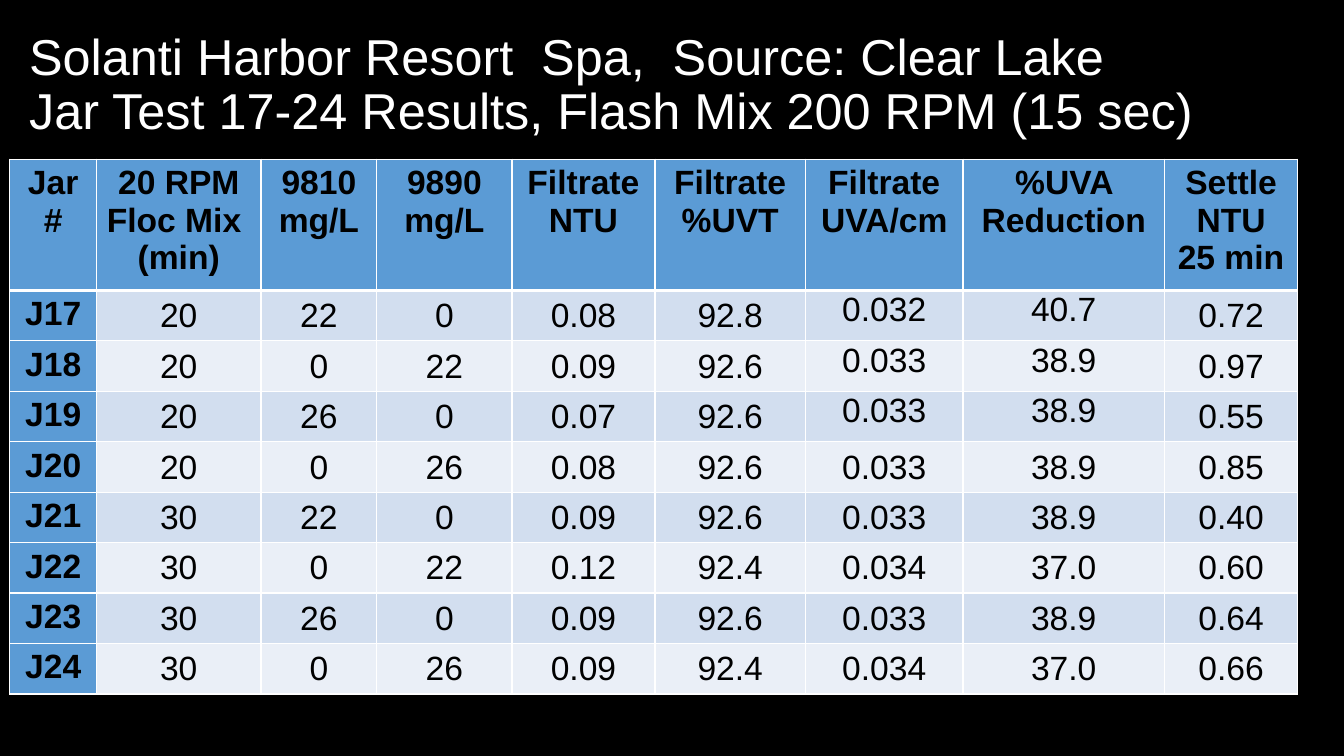
import pptx
import pptx.util
import pptx.dml.color
import pptx.enum.text
import pptx.oxml.ns
import lxml.etree

Pt = pptx.util.Pt
Align = pptx.enum.text.PP_ALIGN
Anchor = pptx.enum.text.MSO_ANCHOR
hues = {"black": "000000", "white": "FFFFFF", "blue": "5B9BD5",
        "dark": "D2DEEF", "light": "EAEFF7"}


def rgb(name):
    return pptx.dml.color.RGBColor.from_string(hues[name])


def write(frame, text, size=24, color="black", bold=False, align=Align.CENTER, space=None):
    """Fill a text frame, one paragraph for each line of text."""
    for i, line in enumerate(text.split("\n")):
        para = frame.add_paragraph() if i else frame.paragraphs[0]
        para.text = line
        para.alignment = align
        para.line_spacing = space
        for run in para.runs:
            run.font.name = "Arial"
            run.font.size = Pt(size)
            run.font.bold = bold
            run.font.color.rgb = rgb(color)


deck = pptx.Presentation()
deck.slide_width, deck.slide_height = Pt(960), Pt(540)
slide = deck.slides.add_slide(deck.slide_layouts[6])
slide.background.fill.solid()
slide.background.fill.fore_color.rgb = rgb("black")

title = slide.shapes.add_textbox(Pt(13.7), Pt(9.4), Pt(877.7), Pt(104.4)).text_frame
title.word_wrap = True
title.vertical_anchor = Anchor.MIDDLE
write(title, "Solanti Harbor Resort  Spa,  Source: Clear Lake\v"
      "Jar Test 17-24 Results, Flash Mix 200 RPM (15 sec)",
      size=36, color="white", align=Align.LEFT, space=0.9)

heads = ["Jar #", "20 RPM\nFloc Mix \n(min)", "9810\nmg/L", "9890\nmg/L",
         "Filtrate\nNTU", "Filtrate\n%UVT", "Filtrate\nUVA/cm",
         "%UVA Reduction", "Settle\nNTU\n25 min"]
tests = """J17 20 22 0 0.08 92.8 0.032 40.7 0.72
J18 20 0 22 0.09 92.6 0.033 38.9 0.97
J19 20 26 0 0.07 92.6 0.033 38.9 0.55
J20 20 0 26 0.08 92.6 0.033 38.9 0.85
J21 30 22 0 0.09 92.6 0.033 38.9 0.40
J22 30 0 22 0.12 92.4 0.034 37.0 0.60
J23 30 26 0 0.09 92.6 0.033 38.9 0.64
J24 30 0 26 0.09 92.4 0.034 37.0 0.66"""
rows = [heads] + [line.split() for line in tests.split("\n")]
wides = [62, 117.4, 82.8, 96.5, 102.2, 107.5, 112.5, 144, 95]
highs = [87.6] + [34] * 8

grid = slide.shapes.add_table(len(rows), len(wides), Pt(7), Pt(113.8),
                              Pt(sum(wides)), Pt(sum(highs))).table
for col, wide in zip(grid.columns, wides):
    col.width = Pt(wide)
for row, high in zip(grid.rows, highs):
    row.height = Pt(high)

for r, row in enumerate(rows):
    for c, text in enumerate(row):
        cell = grid.cell(r, c)
        label = r == 0 or c == 0
        write(cell.text_frame, text, bold=label)
        if not label:
            cell.margin_left = cell.margin_right = cell.margin_top = Pt(0.7)
            cell.margin_bottom = Pt(0)
            # The first three UVA results sit at the top of their cells
            if not (r <= 3 and c in (6, 7)):
                cell.vertical_anchor = Anchor.MIDDLE

        props = cell._tc.get_or_add_tcPr()
        for side in "LRTB":
            thick = (r, side) in ((0, "B"), (1, "T"))
            edge = lxml.etree.SubElement(props, pptx.oxml.ns.qn("a:ln" + side),
                                         w=str(Pt(3 if thick else 1)))
            fill = lxml.etree.SubElement(edge, pptx.oxml.ns.qn("a:solidFill"))
            lxml.etree.SubElement(fill, pptx.oxml.ns.qn("a:srgbClr"), val=hues["white"])
        cell.fill.solid()
        cell.fill.fore_color.rgb = rgb("blue" if label else "dark" if r % 2 else "light")

deck.save("out.pptx")
